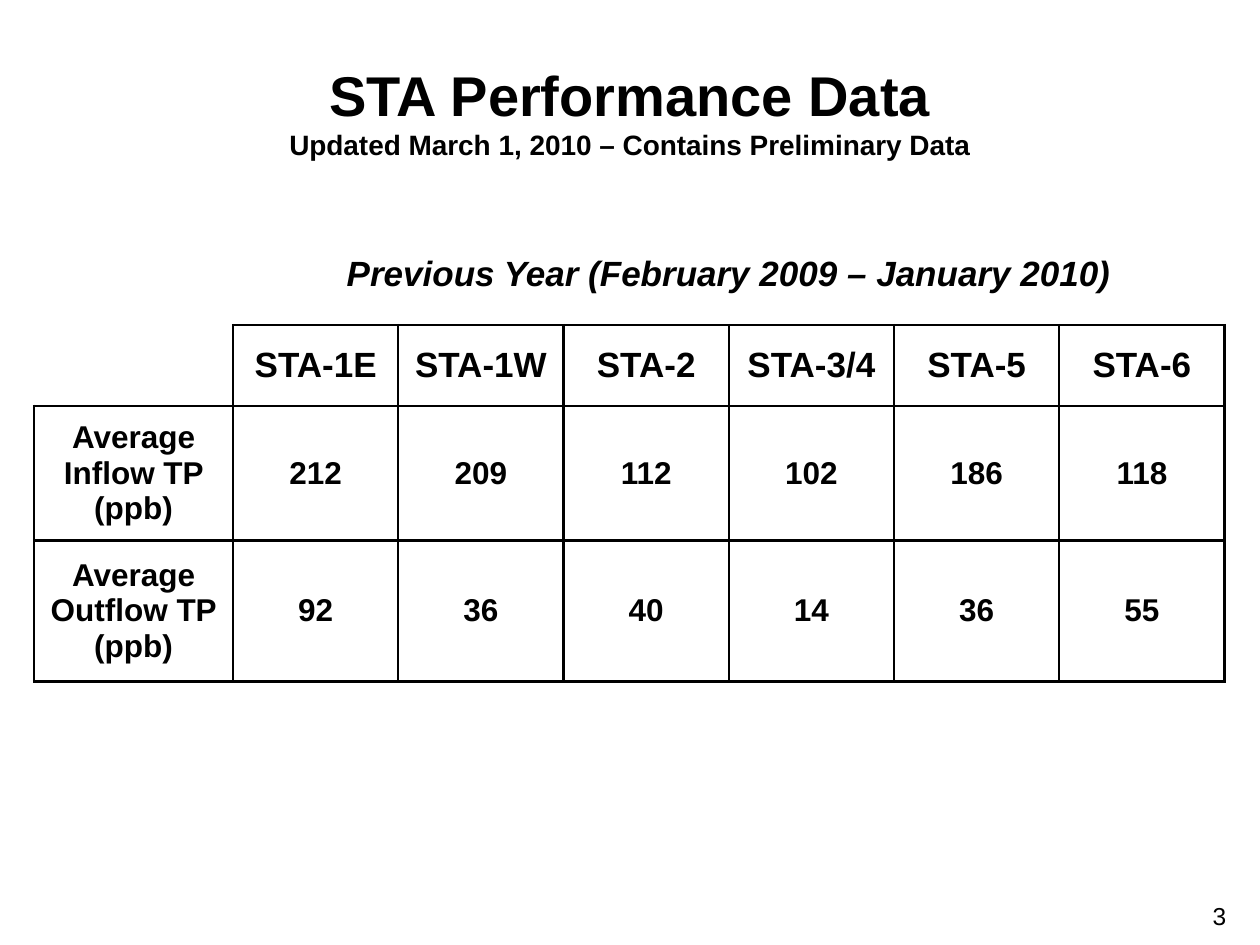
from dataclasses import dataclass

from lxml import etree
from pptx import Presentation
from pptx.dml.color import RGBColor
from pptx.enum.text import MSO_ANCHOR, MSO_AUTO_SIZE, PP_ALIGN
from pptx.oxml.ns import qn
from pptx.util import Inches, Pt

CENTER, RIGHT = PP_ALIGN.CENTER, PP_ALIGN.RIGHT
MIDDLE = MSO_ANCHOR.MIDDLE
NO_AUTOFIT = MSO_AUTO_SIZE.NONE
TITLE_ONLY = 5


@dataclass(frozen=True)
class Theme:
    font: str = "Arial"
    ink: str = "000000"
    title: int = 32
    subtitle: int = 16
    heading: int = 20
    body: int = 18
    page: int = 14
    rule: float = 1.5


THEME = Theme()
PERIOD = "Previous Year (February 2009 – January 2010)"
AREAS = ["STA-1E", "STA-1W", "STA-2", "STA-3/4", "STA-5", "STA-6"]
MEASURES = {
    "Average Inflow TP (ppb)": [212, 209, 112, 102, 186, 118],
    "Average Outflow TP (ppb)": [92, 36, 40, 14, 36, 55],
}
LABEL_WIDTH = 1.58
ROW_HEIGHTS = [0.81, 0.64, 1.07, 1.12]


def add_run(p, text, size, bold=True, italic=False):
    r = p.add_run()
    r.text = text
    r.font.name = THEME.font
    r.font.size = Pt(size)
    r.font.bold = bold
    r.font.italic = italic
    r.font.color.rgb = RGBColor.from_string(THEME.ink)


def place(sp, box):
    sp.left, sp.top, sp.width, sp.height = (Inches(v) for v in box)


def fill_title(s, box):
    sp = s.shapes.title
    place(sp, box)
    tf = sp.text_frame
    tf.auto_size = NO_AUTOFIT
    tf.vertical_anchor = MIDDLE
    p = tf.paragraphs[0]
    p.alignment = CENTER
    add_run(p, "STA Performance Data", THEME.title)
    p.add_line_break()
    add_run(p, "Updated March 1, 2010 – Contains Preliminary Data", THEME.subtitle)


def set_borders(cell, sides):
    """Rule the given sides (letters of LRTB) and clear the others."""
    tc_pr = cell._tc.get_or_add_tcPr()
    for i, side in enumerate("LRTB"):
        ln = etree.Element(qn(f"a:ln{side}"), w=str(Pt(THEME.rule)))
        if side in sides:
            fill = etree.SubElement(ln, qn("a:solidFill"))
            etree.SubElement(fill, qn("a:srgbClr"), val=THEME.ink)
        else:
            etree.SubElement(ln, qn("a:noFill"))
        tc_pr.insert(i, ln)


def ruled_sides(row, col):
    if row == 0:
        return "B" if col else ""
    if row == 1 and col == 0:
        return "RB"
    return "LRTB"


def add_performance_table(s, box):
    left, top, width, height = box
    rows = [["", PERIOD] + [""] * (len(AREAS) - 1), ["", *AREAS]]
    rows += [[label, *values] for label, values in MEASURES.items()]
    frame = s.shapes.add_table(len(rows), len(rows[0]), *(Inches(v) for v in box))
    table = frame.table
    table.first_row = table.horz_banding = False

    area_width = (width - LABEL_WIDTH) / len(AREAS)
    for col, column in enumerate(table.columns):
        column.width = Inches(area_width if col else LABEL_WIDTH)
    for row, row_height in zip(table.rows, ROW_HEIGHTS):
        row.height = Inches(row_height)
    table.cell(0, 1).merge(table.cell(0, len(AREAS)))

    for i, row in enumerate(rows):
        for j, value in enumerate(row):
            cell = table.cell(i, j)
            cell.fill.background()
            cell.vertical_anchor = MIDDLE
            set_borders(cell, ruled_sides(i, j))
            if value != "":
                p = cell.text_frame.paragraphs[0]
                p.alignment = CENTER
                size = THEME.heading if i < 2 else THEME.body
                add_run(p, str(value), size, italic=i == 0)


def add_page_number(s, box, number):
    sp = s.shapes.add_textbox(*(Inches(v) for v in box))
    tf = sp.text_frame
    tf.word_wrap = True
    p = tf.paragraphs[0]
    p.alignment = RIGHT
    add_run(p, str(number), THEME.page, bold=False)


def main():
    prs = Presentation()
    prs.slide_width, prs.slide_height = Inches(10), Inches(7.5)
    s = prs.slides.add_slide(prs.slide_layouts[TITLE_ONLY])
    add_page_number(s, (9.39, 7.1, 0.44, 0.34), 3)
    fill_title(s, (0.5, 0.42, 9, 0.92))
    add_performance_table(s, (0.27, 1.77, 9.45, sum(ROW_HEIGHTS)))
    prs.save("out.pptx")


if __name__ == "__main__":
    main()
